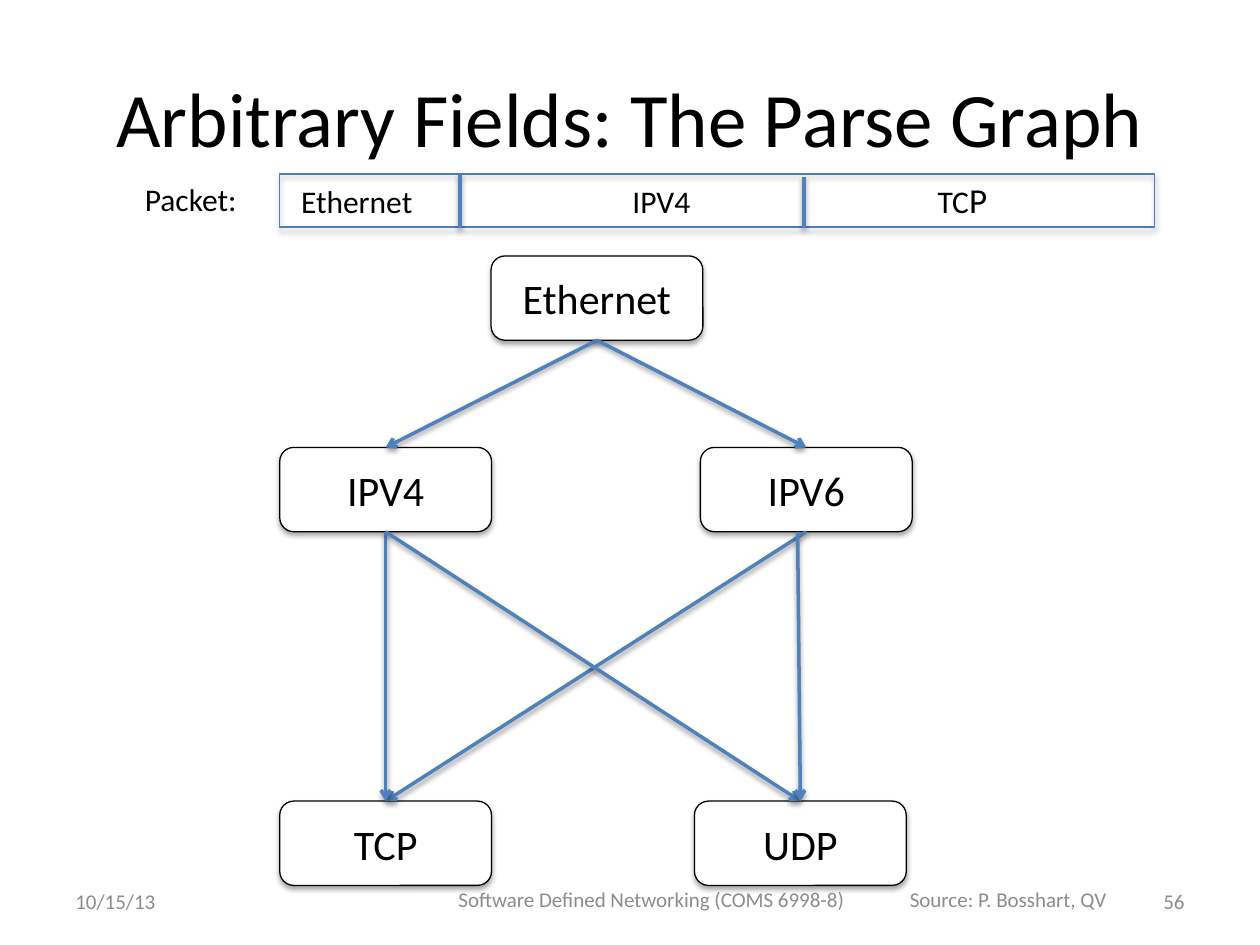
from dataclasses import dataclass

from lxml import etree
from pptx import Presentation
from pptx import util as u
from pptx.dml.color import RGBColor
from pptx.enum import shapes, text
from pptx.oxml import ns

BLACK = RGBColor(0x00, 0x00, 0x00)
WHITE = RGBColor(0xFF, 0xFF, 0xFF)
BLUE = RGBColor(0x4F, 0x81, 0xBD)
FRAME_BLUE = RGBColor(0x4B, 0x7E, 0xBC)
GRAY = RGBColor(0x8C, 0x8C, 0x8C)
FONT = "Calibri"
NODE_WIDTH, NODE_HEIGHT = 4.27, 1.7
LEFT, MIDDLE, TOP = text.PP_ALIGN.LEFT, text.MSO_ANCHOR.MIDDLE, text.MSO_ANCHOR.TOP
CENTER, RIGHT = text.PP_ALIGN.CENTER, text.PP_ALIGN.RIGHT


@dataclass
class Run:
    text: str
    size: float
    color: RGBColor = BLACK


@dataclass
class Box:
    left: float
    top: float
    width: float
    height: float

    def lengths(self) -> list:
        return [u.Cm(value) for value in (self.left, self.top, self.width, self.height)]


@dataclass
class Node:
    name: str
    left: float
    top: float


@dataclass
class Label:
    box: Box
    runs: list[Run]
    align: text.PP_ALIGN = LEFT
    anchor: text.MSO_ANCHOR = TOP
    wrap: bool = True
    grow: bool = False


def write(paragraph, runs: list[Run], align: text.PP_ALIGN) -> None:
    paragraph.alignment = align
    for item in runs:
        run = paragraph.add_run()
        run.text = item.text
        run.font.name = FONT
        run.font.size = u.Pt(item.size)
        run.font.color.rgb = item.color


def add_shadow(properties, distance: float, opacity: int) -> None:
    effects = properties.find(ns.qn("a:effectLst"))
    if effects is None:
        effects = etree.SubElement(properties, ns.qn("a:effectLst"))
    shadow = etree.SubElement(
        effects, ns.qn("a:outerShdw"), blurRad=str(u.Pt(3.1)),
        dist=str(u.Pt(distance)), dir="5400000", rotWithShape="0")
    color = etree.SubElement(shadow, ns.qn("a:srgbClr"), val=str(BLACK))
    etree.SubElement(color, ns.qn("a:alpha"), val=str(opacity * 1000))


def add_panel(slide, kind: shapes.MSO_SHAPE, box: Box, line_color: RGBColor):
    shape = slide.shapes.add_shape(kind, *box.lengths())
    shape.fill.background()
    shape.line.color.rgb = line_color
    shape.line.width = u.Pt(0.75)
    shape.shadow.inherit = False
    add_shadow(shape._element.spPr, 1.8, 35)
    return shape


def add_node(slide, node: Node):
    shape = add_panel(slide, shapes.MSO_SHAPE.FLOWCHART_ALTERNATE_PROCESS,
                      Box(node.left, node.top, NODE_WIDTH, NODE_HEIGHT), BLACK)
    shape.fill.solid()
    shape.fill.fore_color.rgb = WHITE
    shape.text_frame.vertical_anchor = MIDDLE
    write(shape.text_frame.paragraphs[0], [Run(node.name, 24)], CENTER)
    return shape


def add_line(slide, start: tuple[float, float], end: tuple[float, float], arrow: bool = False):
    points = [u.Cm(value) for value in (*start, *end)]
    connector = slide.shapes.add_connector(shapes.MSO_CONNECTOR.STRAIGHT, *points)
    connector.line.color.rgb = BLUE
    connector.line.width = u.Pt(2)
    if arrow:
        etree.SubElement(connector.line._get_or_add_ln(), ns.qn("a:tailEnd"), type="arrow")
    add_shadow(connector._element.spPr, 1.6, 38)
    return connector


def add_edge(slide, parent, child) -> None:
    connector = add_line(slide, (0, 0), (1, 1), arrow=True)
    connector.begin_connect(parent, 2)
    connector.end_connect(child, 0)


def add_label(slide, label: Label):
    shape = slide.shapes.add_textbox(*label.box.lengths())
    frame = shape.text_frame
    frame.word_wrap = label.wrap
    frame.vertical_anchor = label.anchor
    if label.grow:
        frame.auto_size = text.MSO_AUTO_SIZE.SHAPE_TO_FIT_TEXT
    write(frame.paragraphs[0], label.runs, label.align)
    return shape


def add_tab_stops(paragraph, positions: list[float]) -> None:
    tabs = etree.SubElement(paragraph._p.get_or_add_pPr(), ns.qn("a:tabLst"))
    for position in positions:
        etree.SubElement(tabs, ns.qn("a:tab"), pos=str(u.Cm(position)), algn="l")


def add_title(slide, title: str) -> None:
    shape = slide.shapes.title
    shape.left, shape.top, shape.width, shape.height = Box(1.27, 0.76, 22.86, 3.18).lengths()
    shape.text_frame.vertical_anchor = MIDDLE
    write(shape.text_frame.paragraphs[0], [Run(title, 44)], CENTER)


def add_parse_graph(slide) -> None:
    nodes = [Node("Ethernet", 9.9, 5.16), Node("IPV4", 5.64, 9.02), Node("IPV6", 14.12, 9.02),
             Node("TCP", 5.64, 16.15), Node("UDP", 14, 16.15)]
    drawn = {node.name: add_node(slide, node) for node in nodes}
    edges = [("Ethernet", "IPV4"), ("Ethernet", "IPV6"), ("IPV6", "TCP"),
             ("IPV4", "TCP"), ("IPV4", "UDP")]
    for parent, child in edges:
        add_edge(slide, drawn[parent], drawn[child])
    offset_edge = add_line(slide, (16.08, 10.72), (16.13, 16.15), arrow=True)
    offset_edge.end_connect(drawn["UDP"], 0)


def add_packet(slide) -> None:
    add_panel(slide, shapes.MSO_SHAPE.RECTANGLE, Box(5.64, 3.51, 17.63, 1.07), FRAME_BLUE)
    fields = add_label(slide, Label(Box(5.82, 3.48, 17.45, 1.12),
                                    [Run("Ethernet\tIPV4\tTC", 18), Run("P", 20)], grow=True))
    add_tab_stops(fields.text_frame.paragraphs[0], [6.68, 12.83])
    for left, top in [(9.27, 3.51), (16.21, 3.56)]:
        add_line(slide, (left, 4.6), (left, top))
    add_label(slide, Label(Box(2.67, 3.51, 2.41, 1.02), [Run("Packet:", 18)],
                           wrap=False, grow=True))


def add_footers(slide) -> None:
    footers = [
        ("56", Box(18.21, 17.65, 5.92, 1.02), RIGHT),
        ("10/15/13", Box(1.27, 17.65, 5.92, 1.02), LEFT),
        ("Software Defined Networking (COMS 6998-8)", Box(8.69, 17.58, 8.89, 1.09), CENTER),
        ("Source: P. Bosshart, QV", Box(15.88, 17.58, 8.89, 1.09), CENTER),
    ]
    for words, box, align in footers:
        add_label(slide, Label(box, [Run(words, 12, GRAY)], align, MIDDLE))


def main() -> None:
    presentation = Presentation()
    presentation.slide_width, presentation.slide_height = u.Cm(25.4), u.Cm(19.05)
    slide = presentation.slides.add_slide(presentation.slide_layouts[5])
    add_title(slide, "Arbitrary Fields: The Parse Graph")
    add_parse_graph(slide)
    add_packet(slide)
    add_footers(slide)
    presentation.save("out.pptx")


if __name__ == "__main__":
    main()
